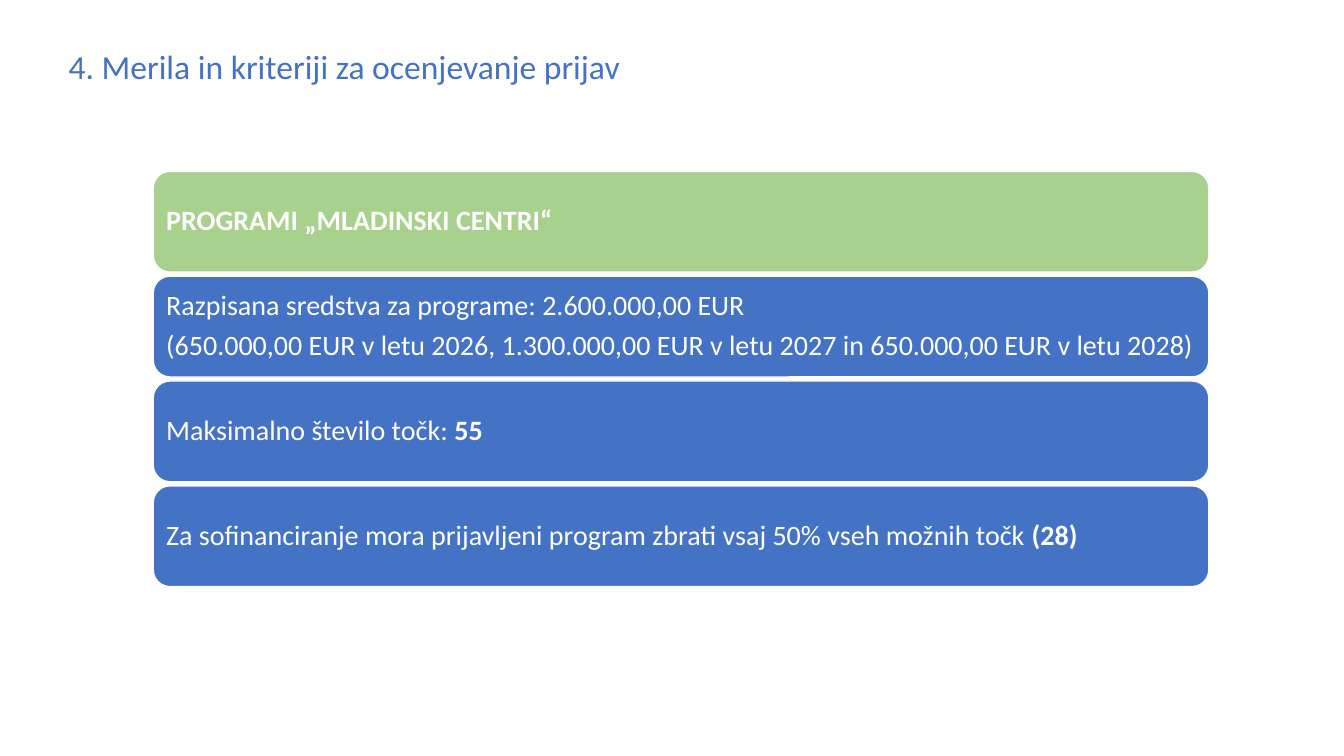
from pptx import Presentation
from pptx.dml.color import RGBColor
from pptx.enum.shapes import MSO_SHAPE
from pptx.enum.text import MSO_ANCHOR, MSO_AUTO_SIZE, PP_ALIGN
from pptx.util import Inches, Pt

ROUNDED = MSO_SHAPE.ROUNDED_RECTANGLE
TOP, MIDDLE = MSO_ANCHOR.TOP, MSO_ANCHOR.MIDDLE
LEFT = PP_ALIGN.LEFT
GROW = MSO_AUTO_SIZE.SHAPE_TO_FIT_TEXT
TITLE_ONLY = 5

BLUE, GREEN, WHITE = "4472C4", "A9D18E", "FFFFFF"

TITLE = "4. Merila in kriteriji za ocenjevanje prijav"
CARDS = [
    (GREEN, [[("PROGRAMI „MLADINSKI CENTRI“", True)]]),
    (BLUE, [
        [("Razpisana sredstva za programe: 2.600.000,00 EUR", False)],
        [("(650.000,00 EUR v letu 2026, 1.300.000,00 EUR v letu 2027 "
          "in 650.000,00 EUR v letu 2028)", False)],
    ]),
    (BLUE, [[("Maksimalno število točk: ", False), ("55", True)]]),
    (BLUE, [[("Za sofinanciranje mora prijavljeni program zbrati "
              "vsaj 50% vseh možnih točk ", False), ("(28)", True)]]),
]

CARD_LEFT, CARD_TOP, CARD_WIDTH, CARD_HEIGHT = 1.52, 1.7, 10.47, 1
CARD_STEP = 1.04
CARD_INSET = 0.08


def color(value):
    return RGBColor.from_string(value)


def write(frame, paragraphs, size, ink, anchor=MIDDLE, wrap=True,
          line_spacing=None, space_after=0):
    frame.word_wrap = wrap
    frame.vertical_anchor = anchor
    for index, spans in enumerate(paragraphs):
        para = frame.add_paragraph() if index else frame.paragraphs[0]
        para.alignment = LEFT
        para.line_spacing = line_spacing
        para.space_before = Pt(0)
        para.space_after = Pt(space_after)
        for text, bold in spans:
            span = para.add_run()
            span.text = text
            span.font.name = "Calibri"
            span.font.size = Pt(size)
            span.font.bold = bold
            span.font.color.rgb = color(ink)


def add_card(page, top, fill, paragraphs):
    card = page.shapes.add_shape(ROUNDED, Inches(CARD_LEFT), Inches(top),
                                 Inches(CARD_WIDTH), Inches(CARD_HEIGHT))
    card.shadow.inherit = False
    card.fill.solid()
    card.fill.fore_color.rgb = color(fill)
    card.line.color.rgb = color(WHITE)
    card.line.width = Pt(1)
    frame = card.text_frame
    frame.margin_left = frame.margin_right = Inches(CARD_INSET)
    frame.margin_top = frame.margin_bottom = Inches(CARD_INSET)
    write(frame, paragraphs, 20, WHITE, line_spacing=0.9, space_after=7)


def main():
    deck = Presentation()
    deck.slide_width, deck.slide_height = Inches(13.33), Inches(7.5)
    page = deck.slides.add_slide(deck.slide_layouts[TITLE_ONLY])

    title = page.shapes.title
    title.left, title.top = Inches(0.58), Inches(0.41)
    title.width, title.height = Inches(5.72), Inches(0.5)
    title.text_frame.auto_size = GROW
    write(title.text_frame, [[(TITLE, False)]], 24, BLUE, anchor=TOP, wrap=False)

    for row, (fill, paragraphs) in enumerate(CARDS):
        add_card(page, CARD_TOP + row * CARD_STEP, fill, paragraphs)

    deck.save("out.pptx")


if __name__ == "__main__":
    main()
